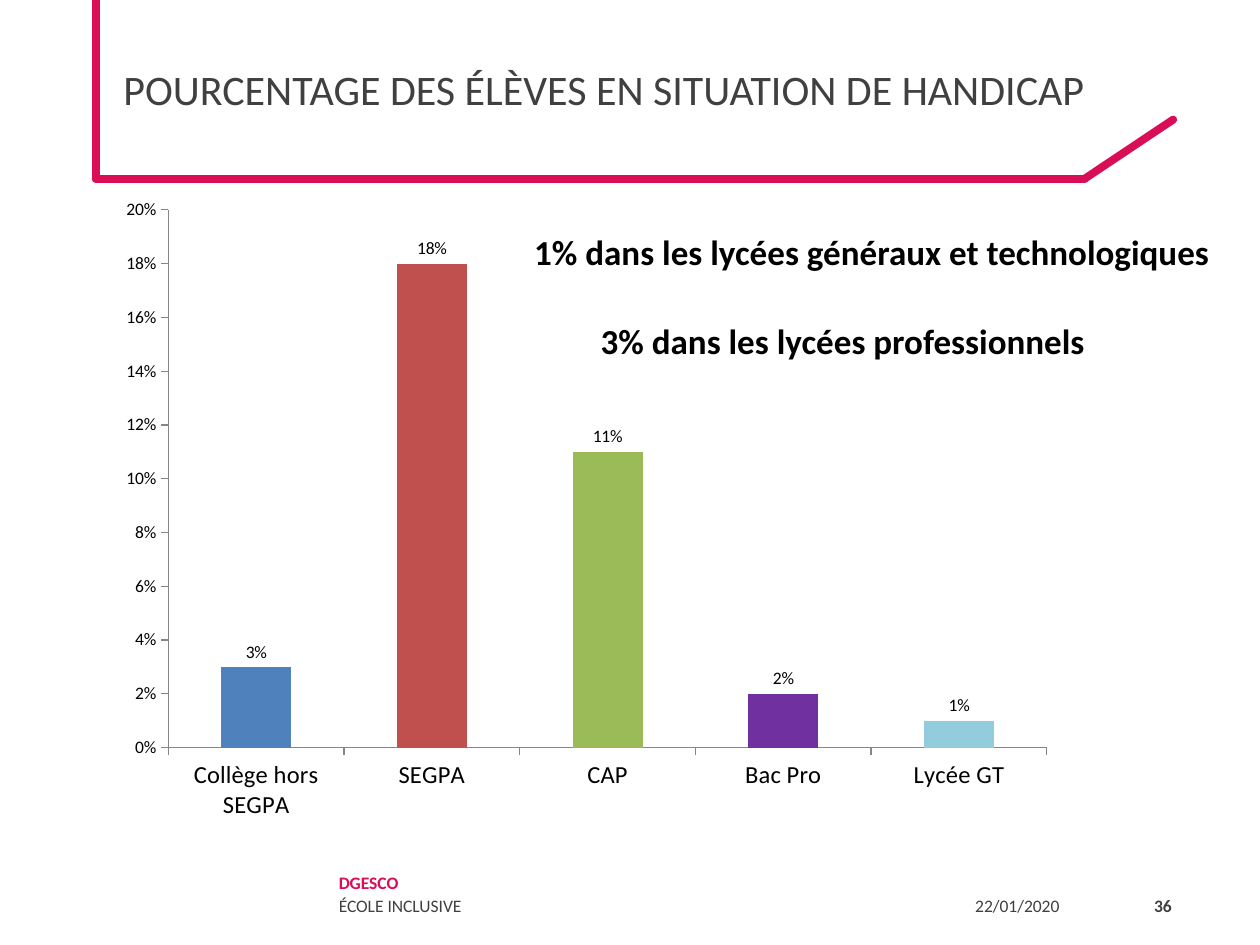
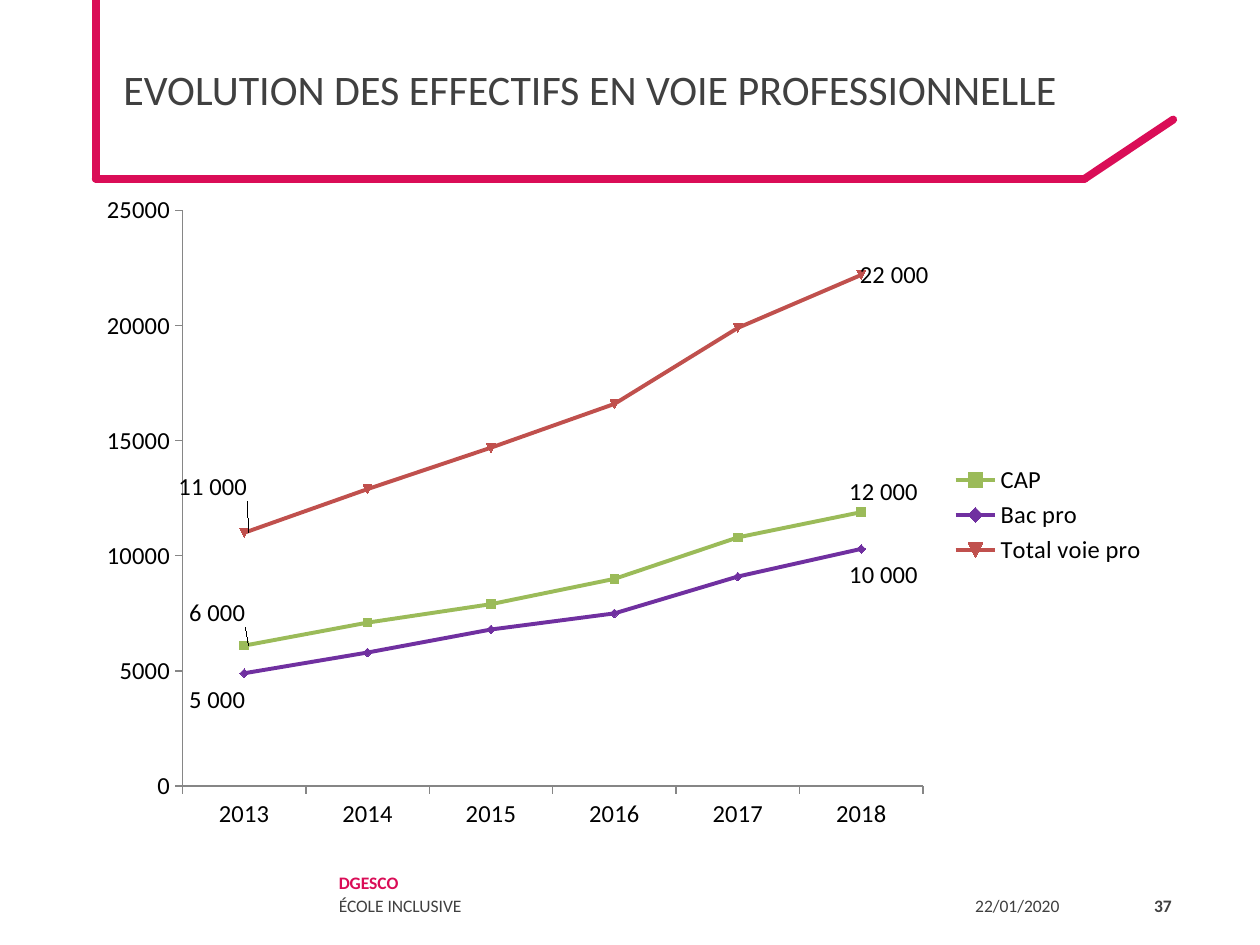
from lxml import etree
from pptx import Presentation
from pptx.chart.data import CategoryChartData
from pptx.dml.color import RGBColor
from pptx.enum.chart import XL_CHART_TYPE, XL_LABEL_POSITION, XL_LEGEND_POSITION, XL_TICK_MARK
from pptx.enum.shapes import MSO_CONNECTOR
from pptx.enum.text import MSO_ANCHOR, PP_ALIGN
from pptx.oxml.ns import qn
from pptx.util import Cm, Pt

FONT = "Calibri"
PINK = RGBColor(0xDA, 0x0D, 0x57)
GREY = RGBColor(0x40, 0x40, 0x40)
AXIS_GREY = RGBColor(0x86, 0x86, 0x86)
BLACK = RGBColor(0, 0, 0)
BLUE = RGBColor(0x4F, 0x81, 0xBD)
RED = RGBColor(0xC0, 0x50, 0x4D)
GREEN = RGBColor(0x9B, 0xBB, 0x59)
PURPLE = RGBColor(0x70, 0x30, 0xA0)
SKY = RGBColor(0x93, 0xCD, 0xDD)

STRAIGHT = MSO_CONNECTOR.STRAIGHT
MIDDLE, TOP = MSO_ANCHOR.MIDDLE, MSO_ANCHOR.TOP
LEFT, RIGHT = PP_ALIGN.LEFT, PP_ALIGN.RIGHT
COLUMNS, LINES = XL_CHART_TYPE.COLUMN_CLUSTERED, XL_CHART_TYPE.LINE
OUTSIDE, NO_TICK = XL_TICK_MARK.OUTSIDE, XL_TICK_MARK.NONE
LABEL_OUT, LABEL_RIGHT = XL_LABEL_POSITION.OUTSIDE_END, XL_LABEL_POSITION.RIGHT
LEGEND_RIGHT = XL_LEGEND_POSITION.RIGHT

TITLE = {"size": Pt(24), "color": GREY}
FOOTER = {"size": Pt(10), "color": GREY}
FOOTER_BOLD = {**FOOTER, "bold": True}
BRAND = {"size": Pt(10), "color": PINK, "bold": True}
CALLOUT = {"size": Pt(20), "color": BLACK, "bold": True}

FRAME = [
    ((1.93, 3.6), (21.87, 3.6)),
    ((21.87, 3.6), (23.65, 2.41)),
    ((1.93, 3.6), (1.93, 0)),
]


def set_font(font, formats):
    font.name = FONT
    for name, value in formats.items():
        if name == "color":
            font.color.rgb = value
        else:
            setattr(font, name, value)


def add_text(s, box, lines, anchor=MIDDLE, align=LEFT, spacing=None, wrap=True):
    tf = s.shapes.add_textbox(*map(Cm, box)).text_frame
    tf.word_wrap = wrap
    tf.vertical_anchor = anchor
    for i, (text, formats) in enumerate(lines):
        p = tf.add_paragraph() if i else tf.paragraphs[0]
        p.alignment = align
        p.line_spacing = spacing
        r = p.add_run()
        r.text = text
        set_font(r.font, formats)


def add_line(s, start, end):
    line = s.shapes.add_connector(STRAIGHT, *map(Cm, start + end))
    line.line.color.rgb = PINK
    line.line.width = Pt(4.5)
    spPr = line._element.spPr
    spPr.find(qn("a:ln")).set("cap", "rnd")
    etree.SubElement(spPr, qn("a:effectLst"))


def add_base(prs, title, number):
    s = prs.slides.add_slide(prs.slide_layouts[6])
    for start, end in FRAME:
        add_line(s, start, end)
    add_text(s, (2.24, 0, 21.89, 3.58), [(title, TITLE)])
    add_text(s, (6.58, 17.07, 12.83, 1.88),
             [("DGESCO", BRAND), ("ÉCOLE INCLUSIVE", FOOTER)], spacing=Pt(13.2))
    add_text(s, (19.41, 17.75, 3.23, 1.02), [("22/01/2020", FOOTER)])
    add_text(s, (22.63, 17.75, 1.24, 1.02), [(str(number), FOOTER_BOLD)], align=RIGHT)
    return s


def manual_layout(**values):
    layout = etree.Element(qn("c:layout"))
    manual = etree.SubElement(layout, qn("c:manualLayout"))
    for name, value in values.items():
        etree.SubElement(manual, qn("c:" + name)).set("val", str(value))
    return layout


def place_plot(chart, x, y, w, h):
    area = chart._chartSpace.find(".//" + qn("c:plotArea"))
    for old in area.findall(qn("c:layout")):
        area.remove(old)
    area.insert(0, manual_layout(layoutTarget="inner", xMode="edge", yMode="edge",
                                 x=x, y=y, w=w, h=h))


def style_axis(axis, size):
    axis.has_major_gridlines = False
    axis.major_tick_mark = OUTSIDE
    axis.minor_tick_mark = NO_TICK
    axis.format.line.color.rgb = AXIS_GREY
    set_font(axis.tick_labels.font, {"size": Pt(size), "color": BLACK})


def add_chart(s, kind, box, plot, cats, series, top, step, number_format, sizes):
    data = CategoryChartData(number_format=number_format)
    data.categories = cats
    for name, values in series:
        data.add_series(name, values)
    chart = s.shapes.add_chart(kind, *map(Cm, box), data).chart
    chart.has_title = False
    chart.has_legend = False
    cat_size, value_size = sizes
    set_font(chart.font, {"size": Pt(value_size), "color": BLACK})
    style_axis(chart.category_axis, cat_size)
    style_axis(chart.value_axis, value_size)
    for name, value in {"minimum_scale": 0, "maximum_scale": top, "major_unit": step}.items():
        setattr(chart.value_axis, name, value)
    labels = chart.value_axis.tick_labels
    labels.number_format = number_format
    labels.number_format_is_linked = False
    chart.plots[0].vary_by_categories = False
    place_plot(chart, *plot)
    return chart


def color_columns(chart, colors):
    plot = chart.plots[0]
    plot.gap_width = 150
    for i, color in enumerate(colors):
        fill = plot.series[0].points[i].format.fill
        fill.solid()
        fill.fore_color.rgb = color
    labels = plot.series[0].data_labels
    labels.show_value = True
    labels.number_format = "0%"
    labels.number_format_is_linked = False
    labels.position = LABEL_OUT
    set_font(labels.font, {"size": Pt(10), "color": BLACK})


def label_point(point, text, dx, dy):
    label = point.data_label
    r = label.text_frame.paragraphs[0].add_run()
    r.text = text
    set_font(r.font, {"size": Pt(14), "color": BLACK})
    label.position = LABEL_RIGHT
    dLbl = label._dLbl
    dLbl.find(qn("c:idx")).addnext(manual_layout(x=dx, y=dy))


def style_series(series, color, labels):
    series.smooth = False
    series.marker.style = None
    series.format.line.color.rgb = color
    series.format.line.width = Pt(2.25)
    series.data_labels.show_value = False
    for i, label in labels.items():
        label_point(series.points[i], *label)


def add_percentages(prs):
    s = add_base(prs, "POURCENTAGE DES ÉLÈVES EN SITUATION DE HANDICAP", 36)
    chart = add_chart(
        s, COLUMNS, (2.24, 3.71, 19.25, 13.06), (0.06, 0.04, 0.92, 0.83),
        ["Collège hors SEGPA", "SEGPA", "CAP", "Bac Pro", "Lycée GT"],
        [("Series 1", (0.03, 0.18, 0.11, 0.02, 0.01))], 0.2, 0.02, "0%", (14, 10))
    color_columns(chart, [BLUE, RED, GREEN, PURPLE, SKY])
    for box, text in [
        ((11.86, 6.32, 10.52, 1.12), "3% dans les lycées professionnels"),
        ((10.52, 4.52, 14.25, 1.12), "1% dans les lycées généraux et technologiques"),
    ]:
        add_text(s, box, [(text, CALLOUT)], anchor=TOP, wrap=False)


def add_evolution(prs):
    s = add_base(prs, "EVOLUTION DES EFFECTIFS EN VOIE PROFESSIONNELLE", 37)
    series = [
        ("CAP", (6100, 7100, 7900, 9000, 10800, 11900)),
        ("Bac pro", (4900, 5800, 6800, 7500, 9100, 10300)),
        ("Total voie pro", (11000, 12900, 14700, 16600, 19900, 22200)),
    ]
    styles = [
        (GREEN, {0: ("6 000", -0.06, -0.05), 5: ("12 000", -0.02, -0.03)}),
        (PURPLE, {0: ("5 000", -0.06, 0.04), 5: ("10 000", -0.02, 0.04)}),
        (RED, {0: ("11 000", -0.07, -0.07), 5: ("22 000", -0.01, 0)}),
    ]
    chart = add_chart(
        s, LINES, (1.73, 3.71, 21.64, 13.34), (0.09, 0.04, 0.69, 0.87),
        [str(year) for year in range(2013, 2019)], series, 25000, 5000, "General", (14, 14))
    for line, (color, labels) in zip(chart.plots[0].series, styles):
        style_series(line, color, labels)
    chart.has_legend = True
    chart.legend.position = LEGEND_RIGHT
    chart.legend.include_in_layout = False
    set_font(chart.legend.font, {"size": Pt(14), "color": BLACK})


def main():
    prs = Presentation()
    prs.slide_width, prs.slide_height = Cm(25.4), Cm(19.05)
    add_percentages(prs)
    add_evolution(prs)
    prs.save("out.pptx")


if __name__ == "__main__":
    main()
